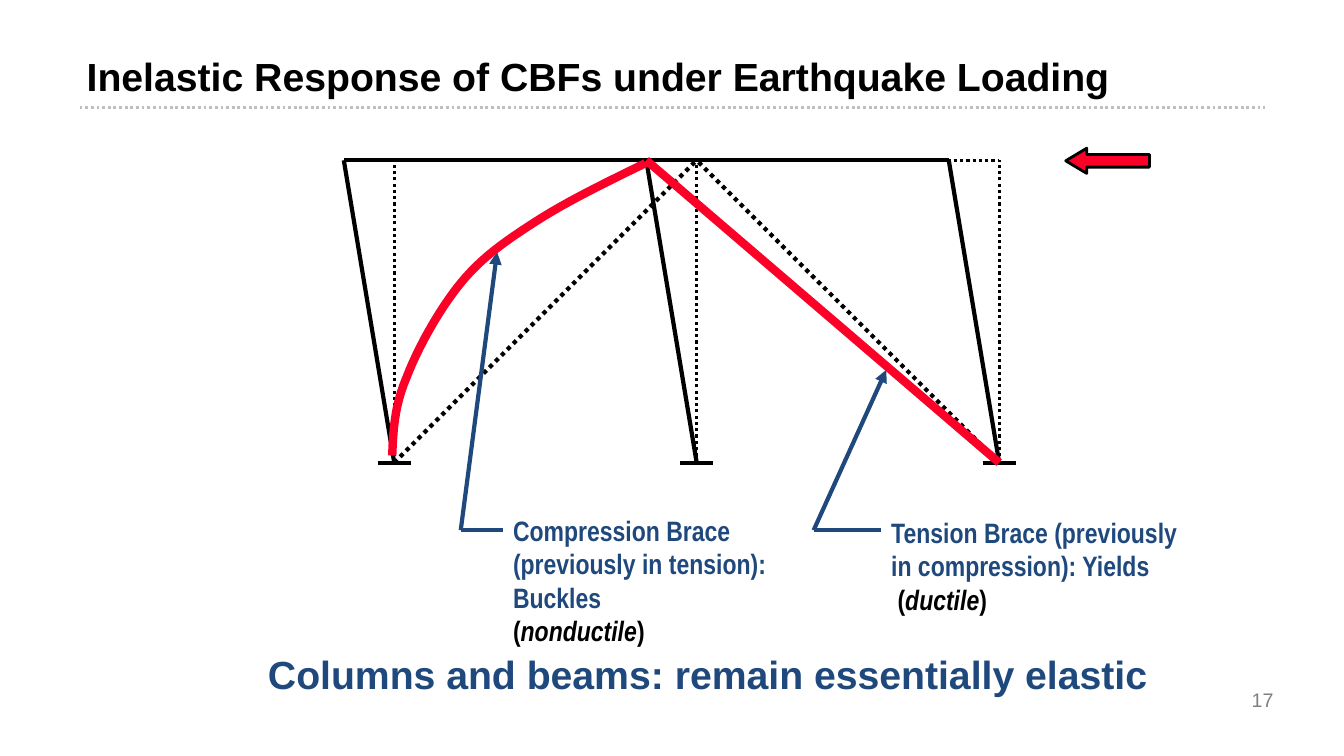
from dataclasses import dataclass

from lxml.etree import SubElement
from pptx import Presentation
from pptx.dml.color import RGBColor
from pptx.enum.dml import MSO_LINE
from pptx.enum.shapes import MSO_CONNECTOR, MSO_SHAPE
from pptx.enum.text import MSO_ANCHOR, MSO_AUTO_SIZE, PP_ALIGN
from pptx.oxml.ns import qn
from pptx.util import Inches, Pt

BLACK, BLUE, RED = "000000", "1F497D", "FC0128"
LIGHT_GRAY, GRAY = "BFBFBF", "7F7F7F"
TOP, BASE = 1.59, 4.59
COLUMNS = (3.91, 6.91, 9.91)
SWAY = 0.5
SUPPORT_HALF_WIDTH = 0.165
ELBOW_Y = 5.26

Point = tuple[float, float]
Box = tuple[float, float, float, float]


@dataclass
class Callout:
    tip: Point
    elbow_x: float
    box: Box
    heading: str
    opening: str
    behavior: str


CALLOUTS = (
    Callout((4.93, 2.5), 4.57, (4.99, 5.04, 3, 1.45),
            "Compression Brace (previously in tension): Buckles", "(", "nonductile"),
    Callout((8.79, 3.67), 8.07, (8.74, 5.06, 3.08, 1.11),
            "Tension Brace (previously in compression): Yields", " (", "ductile"),
)

BUCKLED_START = (3.89, 4.52)
BUCKLED_CURVES = (
    ((3.9, 4.28), (3.91, 4.03), (4.03, 3.75)),
    ((4.14, 3.46), (4.35, 3.08), (4.56, 2.82)),
    ((4.77, 2.56), (5, 2.4), (5.31, 2.2)),
    ((5.62, 2), (6.01, 1.81), (6.4, 1.62)),
)


def rgb(color: str) -> RGBColor:
    return RGBColor.from_string(color)


def add_line(slide, start: Point, end: Point, color: str = BLACK, width: float = 3,
             dotted: bool = False, arrow: bool = False):
    connector = slide.shapes.add_connector(
        MSO_CONNECTOR.STRAIGHT, *(Inches(value) for value in (*start, *end)))
    connector.line.color.rgb = rgb(color)
    connector.line.width = Pt(width)
    if dotted:
        connector.line.dash_style = MSO_LINE.ROUND_DOT
    properties = connector._element.spPr
    if arrow:
        SubElement(properties.find(qn("a:ln")), qn("a:tailEnd"), type="triangle")
    SubElement(properties, qn("a:effectLst"))
    return connector


def add_run(paragraph, text: str, *, size: float, font: str = "Arial", color: str = BLACK,
            bold: bool = True, italic: bool = False) -> None:
    run = paragraph.add_run()
    run.text = text
    run.font.size = Pt(size)
    run.font.name = font
    run.font.color.rgb = rgb(color)
    run.font.bold = bold
    run.font.italic = italic


def prepare_text(shape, anchor=MSO_ANCHOR.TOP, align=PP_ALIGN.LEFT):
    """Set up the text frame and return its first paragraph."""
    frame = shape.text_frame
    frame.word_wrap = True
    frame.auto_size = MSO_AUTO_SIZE.NONE
    frame.vertical_anchor = anchor
    frame.paragraphs[0].alignment = align
    return frame.paragraphs[0]


def add_text_box(slide, box: Box, **layout):
    return prepare_text(slide.shapes.add_textbox(*map(Inches, box)), **layout)


def add_title(slide, text: str) -> None:
    title = slide.shapes.title
    title.left, title.top, title.width, title.height = map(Inches, (0.76, 0.47, 11.97, 0.68))
    add_run(prepare_text(title), text, size=28)
    add_line(slide, (0.79, 1.07), (12.55, 1.07), LIGHT_GRAY, 2, dotted=True)


def add_undeformed_frame(slide) -> None:
    left, middle, right = COLUMNS
    for x in COLUMNS:
        add_line(slide, (x, BASE), (x, TOP), width=2.25, dotted=True)
        add_line(slide, (x - SUPPORT_HALF_WIDTH, BASE), (x + SUPPORT_HALF_WIDTH, BASE))
    for start, end in ((left, middle), (middle, right)):
        add_line(slide, (start, TOP), (end, TOP), width=2.25, dotted=True)
    for x in (left, right):
        add_line(slide, (x, BASE), (middle, TOP), dotted=True)


def add_load_arrow(slide) -> None:
    arrow = slide.shapes.add_shape(
        MSO_SHAPE.RIGHT_ARROW, *map(Inches, (10.57, 1.47, 0.83, 0.25)))
    arrow.rotation = 180
    arrow.adjustments[0], arrow.adjustments[1] = 0.5, 0.83
    arrow.shadow.inherit = False
    arrow.fill.solid()
    arrow.fill.fore_color.rgb = rgb(RED)
    arrow.line.color.rgb = rgb(BLACK)
    arrow.line.width = Pt(2)


def add_callout(slide, callout: Callout) -> None:
    elbow = (callout.elbow_x, ELBOW_Y)
    add_line(slide, elbow, callout.tip, BLUE, arrow=True)
    add_line(slide, elbow, (callout.box[0], ELBOW_Y), BLUE)
    paragraph = add_text_box(slide, callout.box)
    label = {"size": 20, "font": "Arial Narrow"}
    add_run(paragraph, callout.heading, color=BLUE, **label)
    paragraph.add_line_break()
    add_run(paragraph, callout.opening, **label)
    add_run(paragraph, callout.behavior, italic=True, **label)
    add_run(paragraph, ")", **label)


def curve_points(start: Point, curves, steps: int = 12) -> list[Point]:
    """Sample a chain of cubic Bézier curves, leaving out the start point."""
    points = []
    for first, second, end in curves:
        for step in range(1, steps + 1):
            t = step / steps
            weights = ((1 - t) ** 3, 3 * t * (1 - t) ** 2, 3 * t ** 2 * (1 - t), t ** 3)
            points.append(tuple(
                sum(weight * value for weight, value in zip(weights, values))
                for values in zip(start, first, second, end)))
        start = end
    return points


def add_buckled_brace(slide) -> None:
    builder = slide.shapes.build_freeform(*map(Inches, BUCKLED_START))
    builder.add_line_segments(
        [(Inches(x), Inches(y)) for x, y in curve_points(BUCKLED_START, BUCKLED_CURVES)],
        close=False)
    brace = builder.convert_to_shape()
    brace.shadow.inherit = False
    brace.fill.background()
    brace.line.color.rgb = rgb(RED)
    brace.line.width = Pt(6)


def add_deformed_frame(slide) -> None:
    left, middle, right = COLUMNS
    add_line(slide, (left - SWAY, TOP), (right - SWAY, TOP))
    for x in COLUMNS:
        add_line(slide, (x, BASE), (x - SWAY, TOP))
    add_line(slide, (right, BASE), (middle - SWAY, TOP), RED, 6)
    add_buckled_brace(slide)


def main() -> None:
    presentation = Presentation()
    presentation.slide_width, presentation.slide_height = Inches(13.33), Inches(7.5)
    slide = presentation.slides.add_slide(presentation.slide_layouts[5])

    add_title(slide, "Inelastic Response of CBFs under Earthquake Loading")
    number = add_text_box(slide, (9.62, 6.74, 3.11, 0.4),
                          anchor=MSO_ANCHOR.MIDDLE, align=PP_ALIGN.RIGHT)
    add_run(number, "17", size=14, color=GRAY, bold=False)
    add_undeformed_frame(slide)
    add_load_arrow(slide)
    for callout in CALLOUTS:
        add_callout(slide, callout)
    add_deformed_frame(slide)
    conclusion = add_text_box(slide, (2.56, 6.4, 9.03, 0.57))
    add_run(conclusion, "Columns and beams: remain essentially elastic", size=28, color=BLUE)

    presentation.save("out.pptx")


if __name__ == "__main__":
    main()
